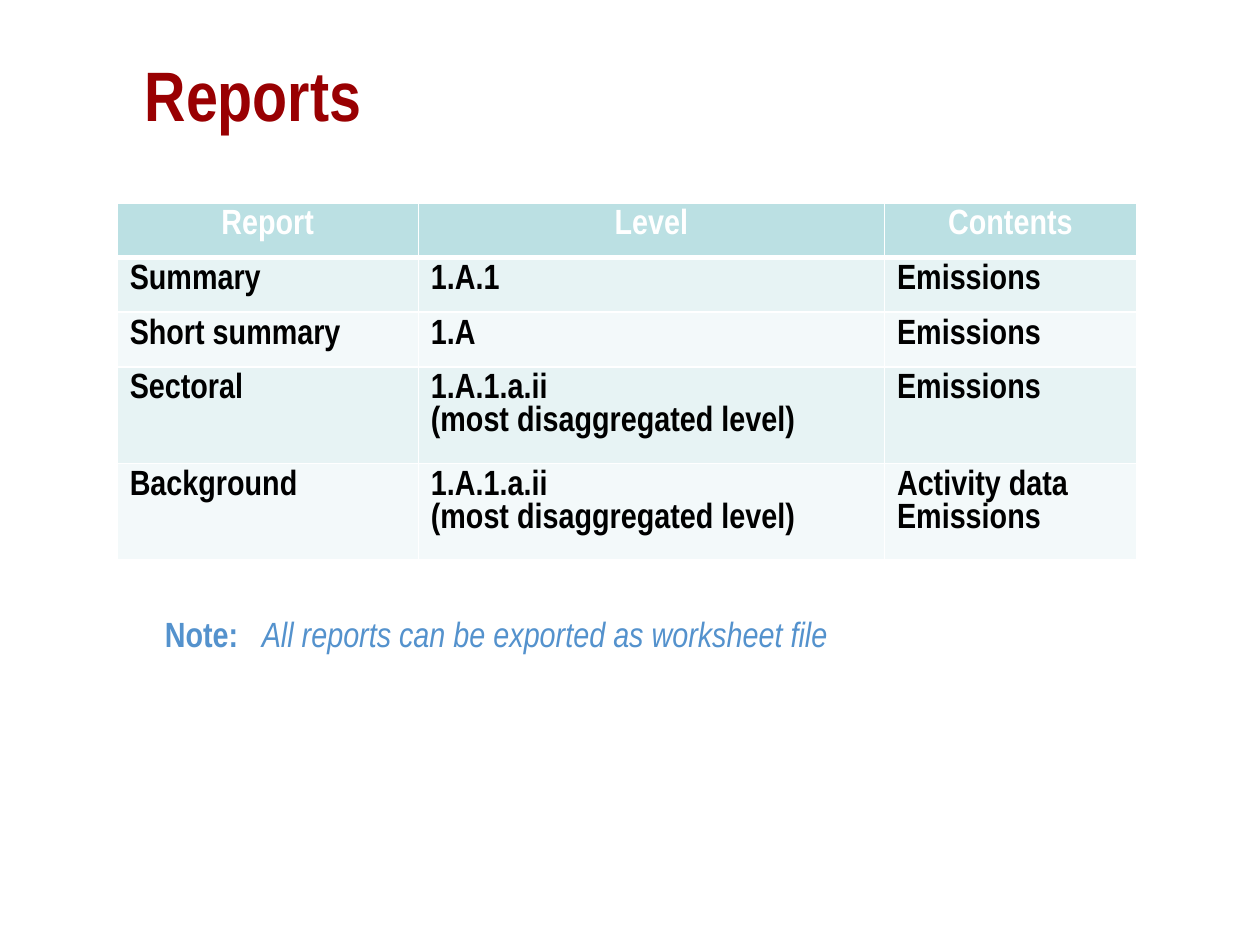
from lxml import etree
from pptx import Presentation
from pptx.dml.color import RGBColor
from pptx.enum import text as t
from pptx.oxml import ns
from pptx.util import Inches, Pt

RED = RGBColor(0x99, 0x00, 0x02)
BLUE = RGBColor(0x54, 0x92, 0xCD)
TEAL = RGBColor(0xBB, 0xE0, 0xE3)
PALE = RGBColor(0xE7, 0xF3, 0xF4)
FAINT = RGBColor(0xF3, 0xF9, 0xFA)
WHITE = RGBColor(0xFF, 0xFF, 0xFF)
BLACK = RGBColor(0, 0, 0)

DEEP = "(most disaggregated level)"
ROWS = [
    ("Report", "Level", "Contents"),
    ("Summary", "1.A.1", "Emissions"),
    ("Short summary", "1.A", "Emissions"),
    ("Sectoral", "1.A.1.a.ii\n" + DEEP, "Emissions"),
    ("Background", "1.A.1.a.ii\n" + DEEP, "Activity data Emissions"),
]
WIDTHS = (2.39, 3.7, 2)
HEIGHTS = (0.41, 0.41, 0.41, 0.62, 0.62)


def style(font, color, **form):
    font.color.rgb = color
    look = {"name": "Arial Narrow", "size": Pt(20), "bold": True, **form}
    for key, value in look.items():
        setattr(font, key, value)


def add_box(slide, box, anchor):
    frame = slide.shapes.add_textbox(*map(Inches, box)).text_frame
    frame.word_wrap = True
    frame.vertical_anchor = anchor
    return frame.paragraphs[0]


def add_title(slide, box):
    run = add_box(slide, box, t.MSO_ANCHOR.MIDDLE).add_run()
    run.text = "Reports"
    style(run.font, RED, size=Pt(40))


def add_note(slide, box):
    para = add_box(slide, box, t.MSO_ANCHOR.TOP)
    # Tab stop between label and note
    tabs = etree.SubElement(para._p.get_or_add_pPr(), ns.qn("a:tabLst"))
    etree.SubElement(tabs, ns.qn("a:tab"), pos=str(Inches(0.77)), algn="l")
    parts = (("Note:\t", {}),
             ("All reports can be exported as worksheet file",
              {"bold": False, "italic": True}))
    for words, form in parts:
        run = para.add_run()
        run.text = words
        style(run.font, BLUE, **form)


def add_edges(cell, head, below):
    props = cell._tc.get_or_add_tcPr()
    wide = {"lnT": 3 if below else 1, "lnB": 3 if head else 1}
    for spot, side in enumerate(("lnL", "lnR", "lnT", "lnB")):
        line = etree.Element(ns.qn("a:" + side), w=str(Pt(wide.get(side, 1))))
        fill = etree.SubElement(line, ns.qn("a:solidFill"))
        etree.SubElement(fill, ns.qn("a:srgbClr"), val=str(WHITE))
        props.insert(spot, line)


def add_grid(slide, box):
    shape = slide.shapes.add_table(len(ROWS), len(WIDTHS), *map(Inches, box))
    table = shape.table
    for col, width in zip(table.columns, WIDTHS):
        col.width = Inches(width)
    for r, (row, high) in enumerate(zip(ROWS, HEIGHTS)):
        table.rows[r].height = Inches(high)
        head = r == 0
        for c, words in enumerate(row):
            cell = table.cell(r, c)
            cell.text = words
            cell.fill.solid()
            cell.fill.fore_color.rgb = TEAL if head else PALE if r % 2 else FAINT
            add_edges(cell, head, r == 1)
            for para in cell.text_frame.paragraphs:
                para.alignment = t.PP_ALIGN.CENTER if head else t.PP_ALIGN.LEFT
                for run in para.runs:
                    style(run.font, WHITE if head else BLACK)


def main():
    deck = Presentation()
    deck.slide_width, deck.slide_height = Inches(10), Inches(7.5)
    slide = deck.slides.add_slide(deck.slide_layouts[6])
    add_title(slide, (1.05, 0.24, 8.67, 1))
    add_note(slide, (1.21, 4.81, 8.35, 0.81))
    add_grid(slide, (0.93, 1.61, sum(WIDTHS), sum(HEIGHTS)))
    deck.save("out.pptx")


if __name__ == "__main__":
    main()
